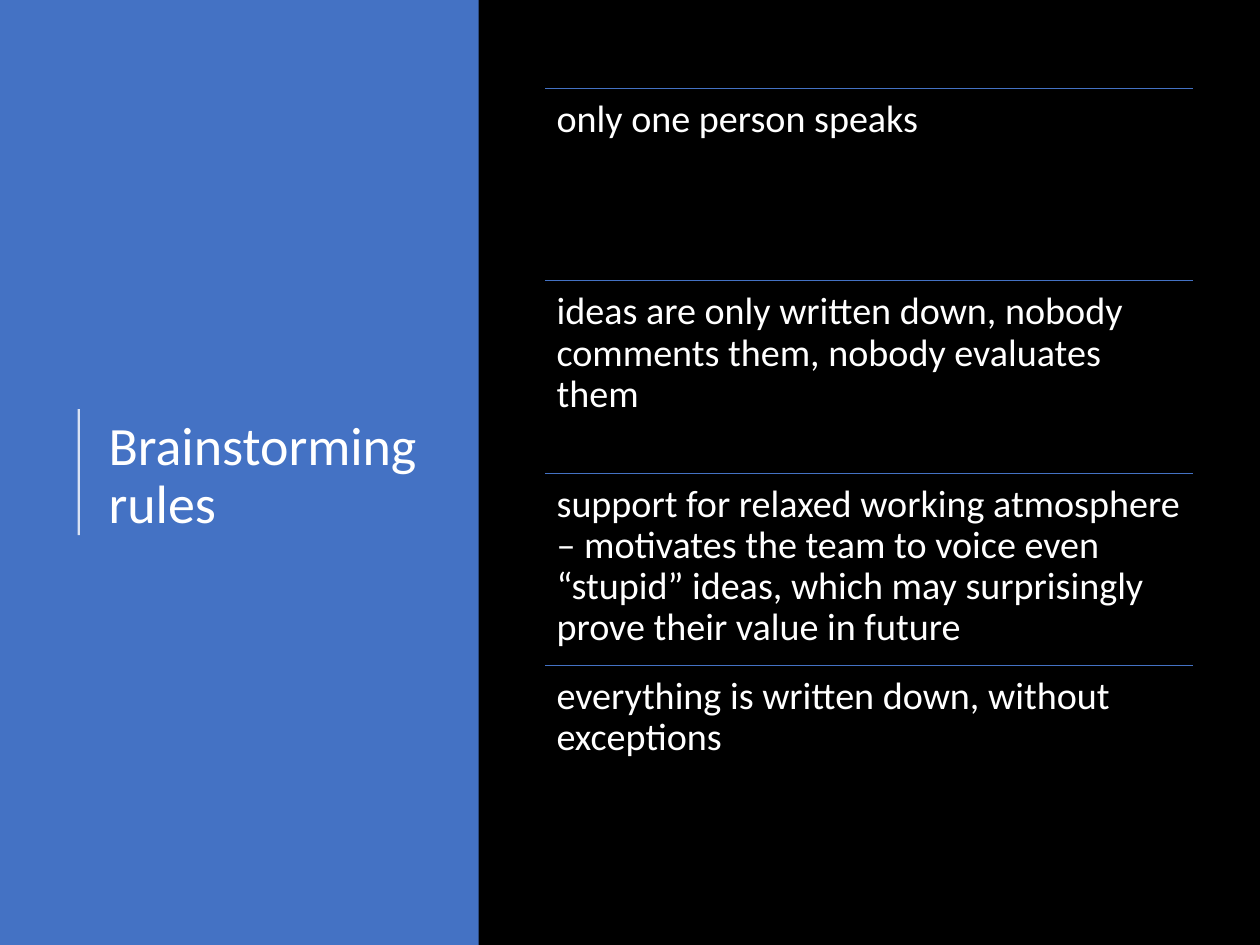
from lxml.etree import SubElement
from pptx import Presentation
from pptx.dml.color import RGBColor
from pptx.enum.shapes import MSO_CONNECTOR, MSO_SHAPE
from pptx.enum.text import MSO_ANCHOR, MSO_AUTO_SIZE, PP_ALIGN
from pptx.oxml.ns import qn
from pptx.util import Cm, Pt

TITLE = "Brainstorming rules"
RULES = [
    "only one person speaks",
    "ideas are only written down, nobody comments them, nobody evaluates them",
    "support for relaxed working atmosphere – motivates the team to voice even "
    "“stupid” ideas, which may surprisingly prove their value in future",
    "everything is written down, without exceptions",
]
COLORS = {"background": "000000", "accent": "4472C4", "text": "FFFFFF"}
FONT = "Calibri"
PAGE_WIDTH, PAGE_HEIGHT = Cm(28), Cm(21)
PANEL_WIDTH = Cm(10.64)
RULE_LEFT, RULE_TOP = Cm(12.12), Cm(1.97)
RULE_WIDTH, RULE_HEIGHT = Cm(14.4), Cm(4.27)
INSET = Cm(0.25)


def color(name):
    return RGBColor.from_string(COLORS[name])


def write(frame, text, size):
    frame.text = text
    frame.word_wrap = True
    frame.auto_size = MSO_AUTO_SIZE.NONE
    para = frame.paragraphs[0]
    para.alignment = PP_ALIGN.LEFT
    para.line_spacing = 0.9
    span = para.runs[0]
    span.font.name = FONT
    span.font.size = Pt(size)
    span.font.color.rgb = color("text")


def draw_line(page, start, end, color_name, width):
    line = page.shapes.add_connector(MSO_CONNECTOR.STRAIGHT, *start, *end)
    line.line.color.rgb = color(color_name)
    line.line.width = Pt(width)
    SubElement(line.element.spPr, qn("a:effectLst"))
    return line


def add_title(page):
    title = page.shapes.title
    title.left, title.top = Cm(2.16), Cm(2.18)
    title.width, title.height = Cm(7.75), Cm(16.84)
    write(title.text_frame, TITLE, 34)
    title.text_frame.vertical_anchor = MSO_ANCHOR.MIDDLE

    panel = page.shapes.add_shape(MSO_SHAPE.RECTANGLE, 0, 0, PANEL_WIDTH, PAGE_HEIGHT)
    panel.shadow.inherit = False
    panel.fill.solid()
    panel.fill.fore_color.rgb = color("accent")
    panel.line.fill.background()
    title.element.addprevious(panel.element)

    bar = draw_line(page, (Cm(1.75), Cm(11.89)), (Cm(1.75), Cm(9.09)), "text", 1.5)
    shade = bar.element.spPr.find(".//" + qn("a:srgbClr"))
    SubElement(shade, qn("a:alpha"), val="80000")


def add_rules(page):
    for index, rule in enumerate(RULES):
        top = RULE_TOP + index * RULE_HEIGHT
        draw_line(page, (RULE_LEFT, top), (RULE_LEFT + RULE_WIDTH, top), "accent", 0.5)
        box = page.shapes.add_textbox(RULE_LEFT, top, RULE_WIDTH, RULE_HEIGHT)
        frame = box.text_frame
        write(frame, rule, 24)
        frame.margin_left = frame.margin_right = INSET
        frame.margin_top = frame.margin_bottom = INSET


def main():
    deck = Presentation()
    deck.slide_width, deck.slide_height = PAGE_WIDTH, PAGE_HEIGHT
    page = deck.slides.add_slide(deck.slide_layouts[5])
    page.background.fill.solid()
    page.background.fill.fore_color.rgb = color("background")
    add_title(page)
    add_rules(page)
    deck.save("out.pptx")


if __name__ == "__main__":
    main()
